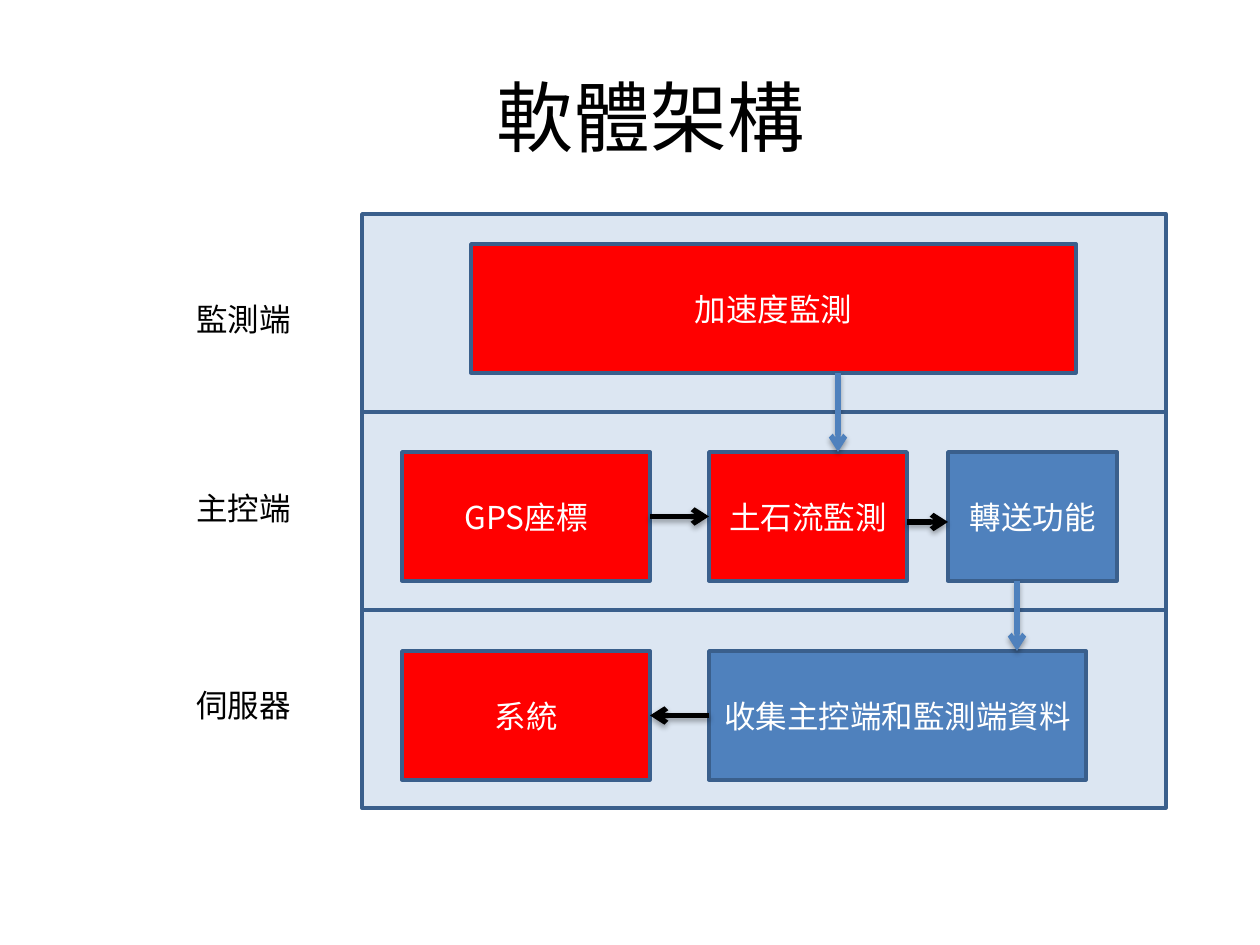
from lxml.etree import SubElement
from pptx import Presentation
from pptx.dml.color import RGBColor
from pptx.enum.shapes import MSO_CONNECTOR, MSO_SHAPE
from pptx.enum.text import MSO_ANCHOR, MSO_AUTO_SIZE, PP_ALIGN
from pptx.oxml.ns import qn
from pptx.util import Emu, Pt

EMU_PER_INCH, PX_PER_INCH = 914400, 126
FONT = "Noto Sans CJK SC"
BLACK = RGBColor(0x00, 0x00, 0x00)
WHITE = RGBColor(0xFF, 0xFF, 0xFF)
RED = RGBColor(0xFF, 0x00, 0x00)
BLUE = RGBColor(0x4F, 0x81, 0xBD)
PALE = RGBColor(0xDC, 0xE6, 0xF2)
OUTLINE = RGBColor(0x3A, 0x5F, 0x8C)

PANEL_LEFT, PANEL_TOP, PANEL_W, PANEL_H = 362, 214, 804, 198
BOX_H = 129
MASTER_TOP, SERVER_TOP = 452, 651
LEFT_X, LEFT_W = 402, 248
MIDDLE_X = 709
LABELS = [("監測端", 294), ("主控端", 483), ("伺服器", 680)]


def px(*values):
    """Turn pixel lengths into EMU."""
    return [Emu(round(v * EMU_PER_INCH / PX_PER_INCH)) for v in values]


def add_text(tf, text, color, size=18, latin=FONT, align=PP_ALIGN.CENTER):
    p = tf.paragraphs[0]
    p.alignment = align
    r = p.add_run()
    r.text = text
    for name, value in {"name": latin, "size": Pt(size)}.items():
        setattr(r.font, name, value)
    r.font.color.rgb = color
    SubElement(r.font._element, qn("a:ea"), typeface=FONT)


def add_rect(s, x, y, w, h, fill):
    sp = s.shapes.add_shape(MSO_SHAPE.RECTANGLE, *px(x, y, w, h))
    sp.shadow.inherit = False
    sp.fill.solid()
    sp.fill.fore_color.rgb = fill
    sp.line.color.rgb = OUTLINE
    sp.line.width = Pt(2)
    return sp


def add_box(s, text, x, y, w, fill):
    sp = add_rect(s, x, y, w, BOX_H, fill)
    tf = sp.text_frame
    tf.word_wrap = True
    tf.vertical_anchor = MSO_ANCHOR.MIDDLE
    add_text(tf, text, WHITE)
    return sp


def add_label(s, text, y):
    tf = s.shapes.add_textbox(*px(184, y, 121, 50)).text_frame
    tf.word_wrap = False
    tf.auto_size = MSO_AUTO_SIZE.SHAPE_TO_FIT_TEXT
    add_text(tf, text, BLACK, align=PP_ALIGN.LEFT)


def add_shadow(sp):
    effects = SubElement(sp._element.spPr, qn("a:effectLst"))
    shadow = SubElement(effects, qn("a:outerShdw"), blurRad="40000",
                        dist="23000", dir="5400000", rotWithShape="0")
    color = SubElement(shadow, qn("a:srgbClr"), val=str(BLACK))
    SubElement(color, qn("a:alpha"), val="35000")


def add_arrow(s, x1, y1, x2, y2, color):
    sp = s.shapes.add_connector(MSO_CONNECTOR.STRAIGHT, *px(x1, y1, x2, y2))
    sp.line.color.rgb = color
    sp.line.width = Pt(3)
    SubElement(sp.line._get_or_add_ln(), qn("a:tailEnd"), type="arrow")
    add_shadow(sp)
    return sp


def join_boxes(s, start, start_side, end, end_side, ends):
    """Draw a black arrow glued to the side middles of two boxes."""
    sp = add_arrow(s, *ends, BLACK)
    sp.begin_connect(start, start_side)
    sp.end_connect(end, end_side)


def add_title(s, text):
    title = s.shapes.title
    place = zip(("left", "top", "width", "height"), px(84, 37, 1134, 158))
    for name, value in place:
        setattr(title, name, value)
    title.text_frame.vertical_anchor = MSO_ANCHOR.MIDDLE
    add_text(title.text_frame, text, BLACK, size=44, latin="Calibri")


def main():
    prs = Presentation()
    prs.slide_width, prs.slide_height = px(1260, 945)
    s = prs.slides.add_slide(prs.slide_layouts[5])
    add_title(s, "軟體架構")

    for row in reversed(range(len(LABELS))):
        add_rect(s, PANEL_LEFT, PANEL_TOP + row * PANEL_H, PANEL_W, PANEL_H, PALE)
    for text, y in LABELS:
        add_label(s, text, y)

    add_box(s, "加速度監測", 471, 244, 605, RED)
    gps = add_box(s, "GPS座標", LEFT_X, MASTER_TOP, LEFT_W, RED)
    debris = add_box(s, "土石流監測", MIDDLE_X, MASTER_TOP, 198, RED)
    add_box(s, "轉送功能", 948, MASTER_TOP, 169, BLUE)
    collector = add_box(s, "收集主控端和監測端資料", MIDDLE_X, SERVER_TOP, 377, BLUE)
    system = add_box(s, "系統", LEFT_X, SERVER_TOP, LEFT_W, RED)

    right, half = LEFT_X + LEFT_W, BOX_H // 2
    master_y, server_y = MASTER_TOP + half, SERVER_TOP + half
    join_boxes(s, gps, 3, debris, 1, (right, master_y, MIDDLE_X, master_y))
    join_boxes(s, collector, 1, system, 3, (MIDDLE_X, server_y, right, server_y))
    add_arrow(s, 838, 373, 838, MASTER_TOP, BLUE)
    add_arrow(s, 1017, MASTER_TOP + BOX_H, 1017, SERVER_TOP, BLUE)
    add_arrow(s, 907, 522, 948, 522, BLACK)

    prs.save("out.pptx")


if __name__ == "__main__":
    main()
